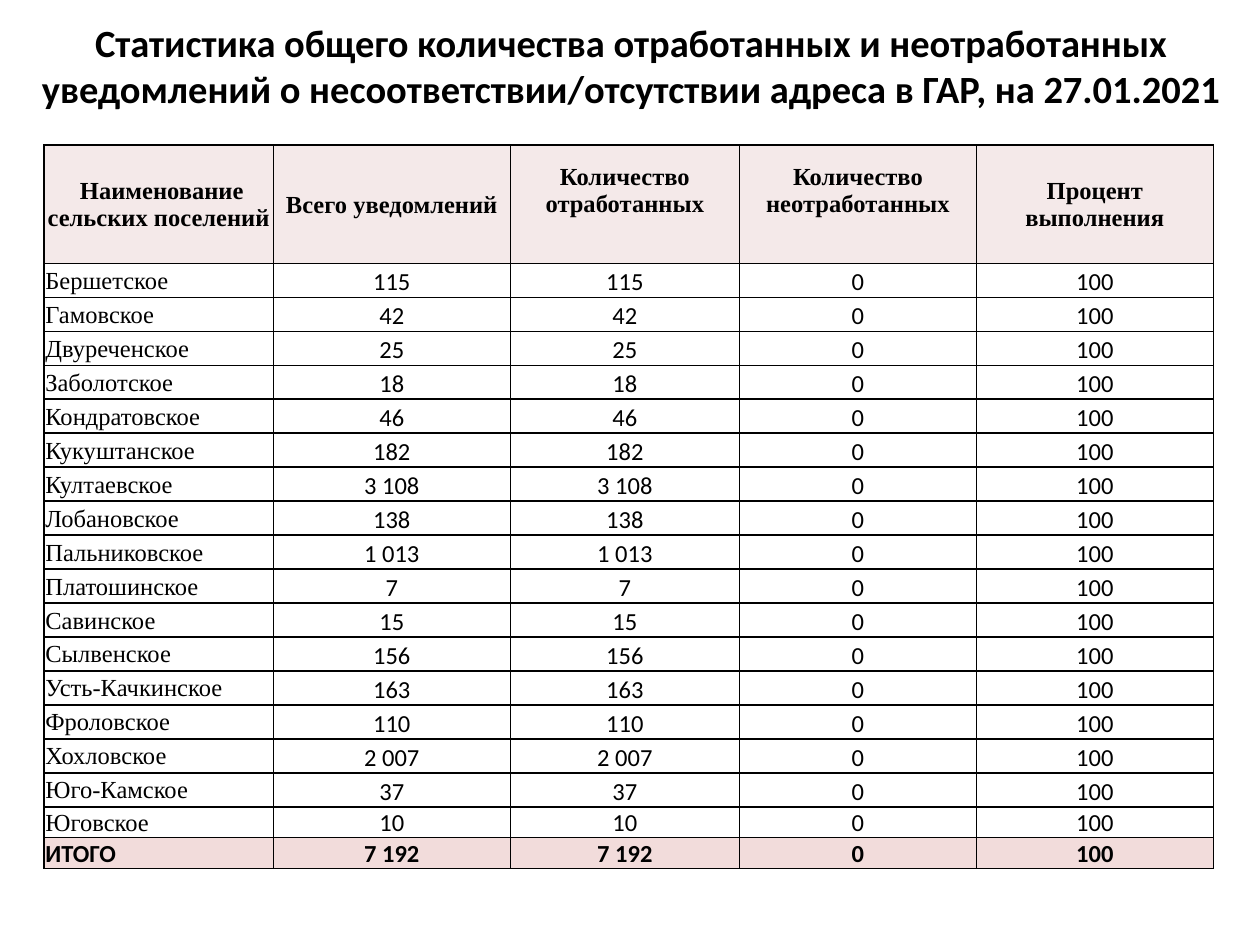
import pptx
import pptx.dml.color
import pptx.enum.text
import pptx.oxml
import pptx.oxml.ns
import pptx.util

Inches = pptx.util.Inches
Pt = pptx.util.Pt
ALIGN = pptx.enum.text.PP_ALIGN
ANCHOR = pptx.enum.text.MSO_ANCHOR

COLORS = {"text": "000000", "border": "000000", "header": "F4E9E9",
          "body": "FFFFFF", "total": "F2DCDB"}
SERIF = "Times New Roman"
SANS = "Calibri"

TITLE = ("Статистика общего количества отработанных и неотработанных "
         "уведомлений о несоответствии/отсутствии адреса в ГАР, на 27.01.2021")
HEADERS = [" Наименование сельских поселений", "Всего уведомлений",
           "Количество отработанных", "Количество неотработанных",
           "Процент выполнения"]
RAISED_HEADERS = HEADERS[2:4]
NOTICES = [
    ("Бершетское", "115"), ("Гамовское", "42"), ("Двуреченское", "25"),
    ("Заболотское", "18"), ("Кондратовское", "46"), ("Кукуштанское", "182"),
    ("Култаевское", "3 108"), ("Лобановское", "138"),
    ("Пальниковское", "1 013"), ("Платошинское", "7"), ("Савинское", "15"),
    ("Сылвенское", "156"), ("Усть-Качкинское", "163"), ("Фроловское", "110"),
    ("Хохловское", "2 007"), ("Юго-Камское", "37"), ("Юговское", "10"),
]
TOTAL = ("ИТОГО", "7 192")
COLUMN_WIDTHS = [1.82, 1.88, 1.82, 1.88, 1.88]
ROW_HEIGHTS = [0.94] + [0.27] * (len(NOTICES) - 1) + [0.24, 0.24]


def set_attributes(target, values):
    for name, value in values.items():
        setattr(target, name, value)


def write_text(text_frame, text, font, size, bold, align):
    paragraph = text_frame.paragraphs[0]
    paragraph.alignment = align
    run = paragraph.add_run()
    run.text = text
    set_attributes(run.font, {"name": font, "size": Pt(size), "bold": bold})
    run.font.color.rgb = pptx.dml.color.RGBColor.from_string(COLORS["text"])


def add_title(slide):
    shape = slide.shapes.add_textbox(
        Inches(0.01), Inches(0.13), Inches(10), Inches(0.77))
    set_attributes(shape.text_frame,
                   {"word_wrap": True, "vertical_anchor": ANCHOR.MIDDLE})
    write_text(shape.text_frame, TITLE, SANS, 22, True, ALIGN.CENTER)


def add_borders(cell):
    properties = cell._tc.get_or_add_tcPr()
    for position, side in enumerate(("lnL", "lnR", "lnT", "lnB")):
        line = pptx.oxml.parse_xml(
            f'<a:{side} {pptx.oxml.ns.nsdecls("a")} w="{Pt(1)}"><a:solidFill>'
            f'<a:srgbClr val="{COLORS["border"]}"/></a:solidFill></a:{side}>')
        properties.insert(position, line)


def fill_cell(cell, text, fill, font, bold, align, anchor, bottom=0):
    set_attributes(cell, {
        "margin_left": Inches(0.01), "margin_right": Inches(0.01),
        "margin_top": Inches(0.01), "margin_bottom": Inches(bottom),
        "vertical_anchor": anchor})
    cell.fill.solid()
    cell.fill.fore_color.rgb = pptx.dml.color.RGBColor.from_string(COLORS[fill])
    write_text(cell.text_frame, text, font, 14, bold, align)
    add_borders(cell)


def fill_header(table):
    for column, text in enumerate(HEADERS):
        bottom = 0.22 if text in RAISED_HEADERS else 0
        fill_cell(table.cell(0, column), text, "header", SERIF, True,
                  ALIGN.CENTER, ANCHOR.MIDDLE, bottom)


def fill_row(table, row, name, count, fill, name_font, bold, name_anchor):
    fill_cell(table.cell(row, 0), name, fill, name_font, bold,
              ALIGN.LEFT, name_anchor)
    for column, value in enumerate((count, count, "0", "100"), start=1):
        fill_cell(table.cell(row, column), value, fill, SANS, bold,
                  ALIGN.CENTER, ANCHOR.BOTTOM)


def add_statistics_table(slide):
    table = slide.shapes.add_table(
        len(ROW_HEIGHTS), len(COLUMN_WIDTHS), Inches(0.35), Inches(1.15),
        Inches(sum(COLUMN_WIDTHS)), Inches(sum(ROW_HEIGHTS))).table
    set_attributes(table, {"first_row": False, "horz_banding": False})
    for column, width in zip(table.columns, COLUMN_WIDTHS):
        column.width = Inches(width)
    for row, height in zip(table.rows, ROW_HEIGHTS):
        row.height = Inches(height)
    fill_header(table)
    for row, (name, count) in enumerate(NOTICES, start=1):
        fill_row(table, row, name, count, "body", SERIF, False, ANCHOR.MIDDLE)
    fill_row(table, len(NOTICES) + 1, *TOTAL, "total", SANS, True, ANCHOR.TOP)


def main():
    presentation = pptx.Presentation()
    set_attributes(presentation,
                   {"slide_width": Inches(10), "slide_height": Inches(7.5)})
    slide = presentation.slides.add_slide(presentation.slide_layouts[6])
    add_title(slide)
    add_statistics_table(slide)
    presentation.save("out.pptx")


if __name__ == "__main__":
    main()
